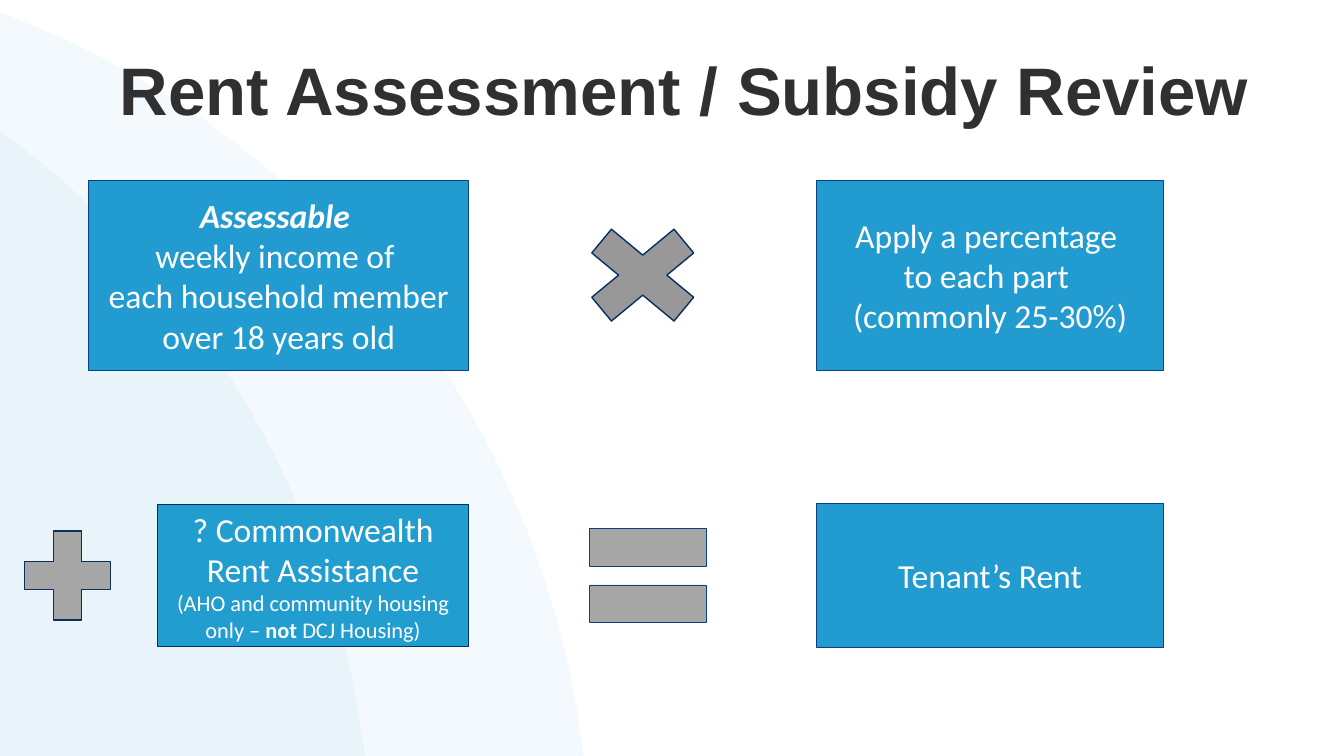
from pptx import Presentation
from pptx.dml.color import RGBColor
from pptx.enum.shapes import MSO_SHAPE
from pptx.enum.text import MSO_ANCHOR, PP_ALIGN
from pptx.oxml.ns import qn
from pptx.util import Inches, Pt
from lxml import etree

ELLIPSE, RECTANGLE, PROCESS = MSO_SHAPE.OVAL, MSO_SHAPE.RECTANGLE, MSO_SHAPE.FLOWCHART_PROCESS
TIMES, PLUS, EQUALS = MSO_SHAPE.MATH_MULTIPLY, MSO_SHAPE.MATH_PLUS, MSO_SHAPE.MATH_EQUAL
CENTER, MIDDLE = PP_ALIGN.CENTER, MSO_ANCHOR.MIDDLE

# Content: a box holds paragraphs, a paragraph holds (text, style) spans
TITLE = "Rent Assessment / Subsidy Review"
INCOME = [[("Assessable \n", "stress"),
           ("weekly income of \neach household member over 18 years old", "body")]]
PERCENTAGE = [[("Apply a percentage \nto each part \n(commonly 25-30%)", "body")]]
ASSISTANCE = [[("? Commonwealth Rent Assistance", "body")],
              [("(AHO and community housing only – ", "note"), ("not", "note_bold"),
               (" DCJ Housing)", "note")]]
RENT = [[("Tenant’s Rent", "body")]]

# Theme
WHITE = "FFFFFF"
THEME = {
    "title": dict(name="Arial", size=48, bold=True, italic=False, color="303030"),
    "body": dict(name="Calibri", size=24, bold=False, italic=False, color=WHITE),
    "stress": dict(name="Calibri", size=24, bold=True, italic=True, color=WHITE),
    "note": dict(name="Calibri", size=16, bold=False, italic=False, color=WHITE),
    "note_bold": dict(name="Calibri", size=16, bold=True, italic=False, color=WHITE),
    "box": dict(fill="229CD0", line="094183", weight=0.5),
    "dark_box": dict(fill="229DD0", line="073061", weight=1),
    "times": dict(fill="989898", line="073061", weight=1),
    "plus": dict(fill="A6A6A6", line="073061", weight=1),
    "equals": dict(fill="A6A6A6", line="094183", weight=0.5),
    "arc": dict(fill="229CD0", opacity=5),
}

# Grid: (left, width) of each column, centre line of each row, in inches
SLIDE = (13.33, 7.5)
TITLE_AREA = (0.98, 0.1, 11.62, 1.66)
COLUMNS = {"lead": (0.09, 1.16), "left": (0.88, 3.77), "left_inset": (1.56, 3.09),
           "times": (5.59, 1.57), "equals": (5.64, 1.57), "right": (8.1, 3.44)}
ROWS = {"top": 2.73, "bottom": 5.71}
ARC_LEFTS, ARC_TOP, ARC_SIZE = (-14.34, -12.17), -0.45, 18.02

# Preset, column, row, height, look, paragraphs
FORMULA = [
    (PROCESS, "right", "top", 1.89, "box", PERCENTAGE),
    (PROCESS, "left", "top", 1.89, "box", INCOME),
    (EQUALS, "equals", "bottom", 1.59, "equals", []),
    (PROCESS, "right", "bottom", 1.43, "box", RENT),
    (TIMES, "times", "top", 1.3, "times", []),
    (PLUS, "lead", "bottom", 1.2, "plus", []),
    (RECTANGLE, "left_inset", "bottom", 1.41, "dark_box", ASSISTANCE),
]


def write_span(para, text, style):
    """Add one span of text, with a line break for each newline."""
    for number, line in enumerate(text.split("\n")):
        if number:
            para.add_line_break()
        if not line:
            continue
        span = para.add_run()
        span.text = line
        look = THEME[style]
        for key in ("name", "bold", "italic"):
            setattr(span.font, key, look[key])
        span.font.size = Pt(look["size"])
        span.font.color.rgb = RGBColor.from_string(look["color"])


def write_text(frame, paragraphs):
    for key, value in dict(word_wrap=True, vertical_anchor=MIDDLE).items():
        setattr(frame, key, value)
    for number, spans in enumerate(paragraphs):
        para = frame.add_paragraph() if number else frame.paragraphs[0]
        para.alignment = CENTER
        for text, style in spans:
            write_span(para, text, style)


def add_part(page, preset, area, style, paragraphs=()):
    look = THEME[style]
    part = page.shapes.add_shape(preset, *map(Inches, area))
    part.shadow.inherit = False
    part.fill.solid()
    part.fill.fore_color.rgb = RGBColor.from_string(look["fill"])
    if "line" in look:
        part.line.color.rgb = RGBColor.from_string(look["line"])
        part.line.width = Pt(look["weight"])
    else:
        part.line.fill.background()
    if "opacity" in look:
        color = part.fill._xPr.find(".//" + qn("a:srgbClr"))
        etree.SubElement(color, qn("a:alpha")).set("val", str(look["opacity"] * 1000))
    if paragraphs:
        write_text(part.text_frame, paragraphs)


def main():
    deck = Presentation()
    deck.slide_width, deck.slide_height = map(Inches, SLIDE)
    page = deck.slides.add_slide(deck.slide_layouts[5])

    # Background arcs, then the title in front of them
    for left in ARC_LEFTS:
        add_part(page, ELLIPSE, (left, ARC_TOP, ARC_SIZE, ARC_SIZE), "arc")
    title = page.shapes.title
    for key, value in zip(("left", "top", "width", "height"), TITLE_AREA):
        setattr(title, key, Inches(value))
    write_text(title.text_frame, [[(TITLE, "title")]])
    title.text_frame.paragraphs[0].line_spacing = 0.9
    page.shapes._spTree.append(title._element)

    # Formula boxes and operators, centred on their rows
    for preset, column, row, height, style, paragraphs in FORMULA:
        left, width = COLUMNS[column]
        area = (left, ROWS[row] - height / 2, width, height)
        add_part(page, preset, area, style, paragraphs)

    deck.save("out.pptx")


if __name__ == "__main__":
    main()
